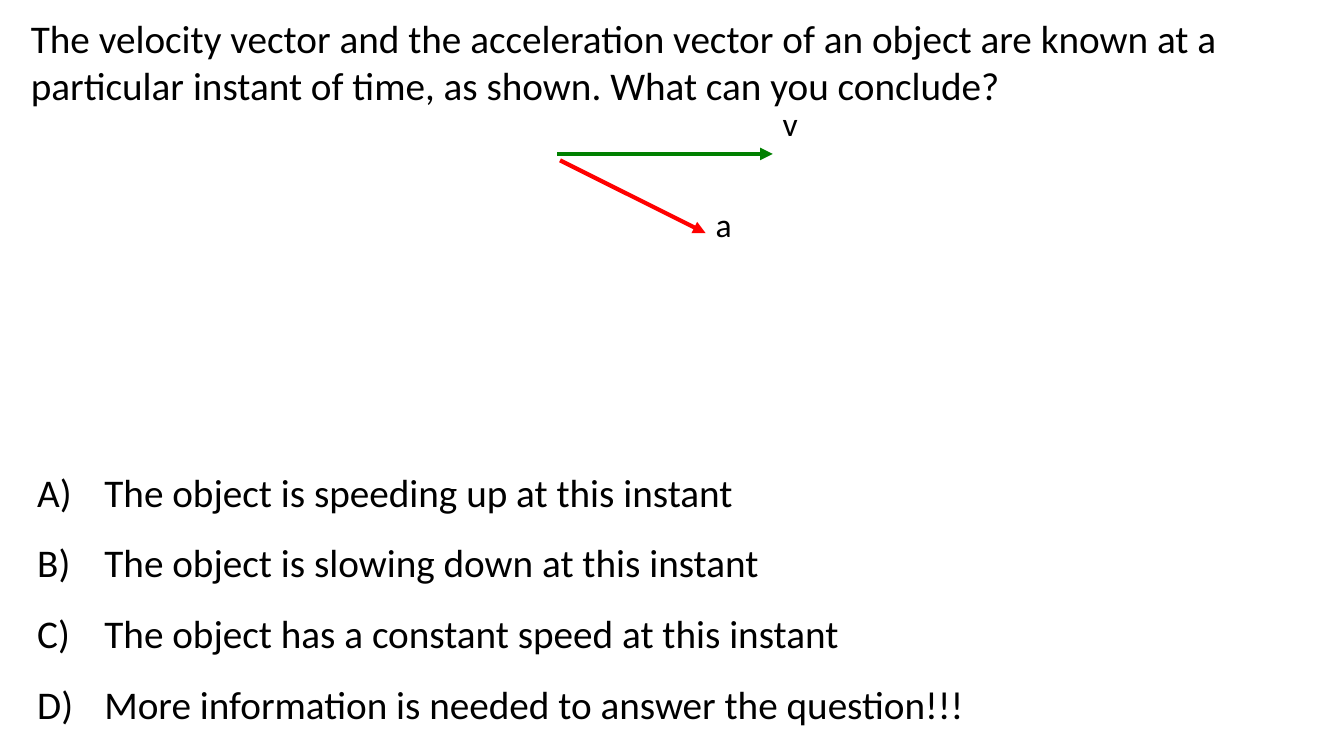
import dataclasses

import pptx
import pptx.dml.color
import pptx.enum.shapes
import pptx.enum.text
import pptx.oxml.ns
import pptx.util
from lxml import etree

Pt = pptx.util.Pt
RGB = pptx.dml.color.RGBColor.from_string


@dataclasses.dataclass(frozen=True)
class Theme:
    font: str = "Calibri"
    ink: str = "000000"
    green: str = "008000"
    red: str = "FF0000"
    body: int = 28
    label: int = 24
    stroke: int = 3


THEME = Theme()
ASK = ("The velocity vector and the acceleration vector of an object are known "
       "at a particular instant of time, as shown. What can you conclude?")
CHOICES = [
    "The object is speeding up at this instant",
    "The object is slowing down at this instant",
    "The object has a constant speed at this instant",
    "More information is needed to answer the question!!!",
]


def add_node(parent, tag, **attrs):
    return etree.SubElement(parent, pptx.oxml.ns.qn(tag), attrs)


def add_text(slide, box, lines, size):
    """Add a text box with one paragraph per line; return the paragraphs."""
    frame = slide.shapes.add_textbox(*map(Pt, box)).text_frame
    frame.word_wrap = True
    frame.auto_size = pptx.enum.text.MSO_AUTO_SIZE.SHAPE_TO_FIT_TEXT
    for i, line in enumerate(lines):
        para = frame.add_paragraph() if i else frame.paragraphs[0]
        run = para.add_run()
        run.text = line
        run.font.name = THEME.font
        run.font.size = Pt(size)
        run.font.color.rgb = RGB(THEME.ink)
    return frame.paragraphs


def add_choices(slide, box):
    """Add the answers, lettered A) to D) with a hanging indent."""
    indent = Pt(48)
    for para in add_text(slide, box, CHOICES, THEME.body):
        para.line_spacing = 1.5
        props = para._p.get_or_add_pPr()
        props.set("marL", str(indent))
        props.set("indent", str(-indent))
        add_node(props, "a:buFont", typeface="+mj-lt")
        add_node(props, "a:buAutoNum", type="alphaUcParenR")


def add_arrow(slide, box, color):
    """Draw an arrow from the top left to the bottom right of the box."""
    x, y, w, h = box
    line = slide.shapes.add_connector(
        pptx.enum.shapes.MSO_CONNECTOR.STRAIGHT,
        Pt(x), Pt(y), Pt(x + w), Pt(y + h))
    line.line.color.rgb = RGB(color)
    line.line.width = Pt(THEME.stroke)
    add_node(line.line._get_or_add_ln(), "a:tailEnd", type="triangle")
    add_node(line._element.spPr, "a:effectLst")


def add_vectors(slide, box):
    """Draw both vectors, each with its label beside the tip."""
    left, top, width, height = box
    vectors = [
        ("v", (left, top, width, 0), THEME.green, 40),
        ("a", (left + 2, top + 4.5, 104, height - 4.5), THEME.red, 24.5),
    ]
    for name, (x, y, w, h), color, rise in vectors:
        add_arrow(slide, (x, y, w, h), color)
        add_text(slide, (x + w, y + h - rise, 60, 36), [name], THEME.label)


def main():
    deck = pptx.Presentation()
    deck.slide_width, deck.slide_height = Pt(960), Pt(540)
    slide = deck.slides.add_slide(deck.slide_layouts[6])
    add_text(slide, (15, 6.5, 920, 75), [ASK], THEME.body)
    add_choices(slide, (19.5, 314, 840, 206))
    add_vectors(slide, (398, 110, 154, 56.5))
    deck.save("out.pptx")


if __name__ == "__main__":
    main()
